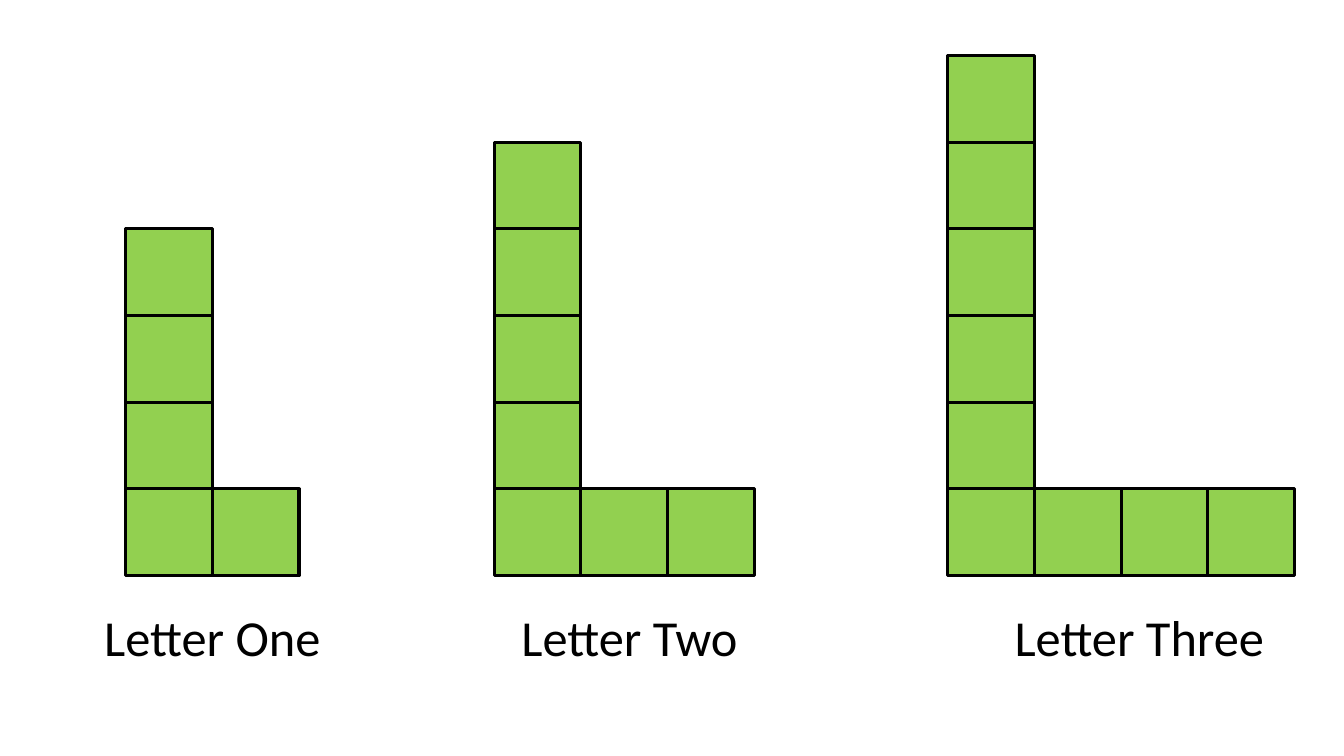
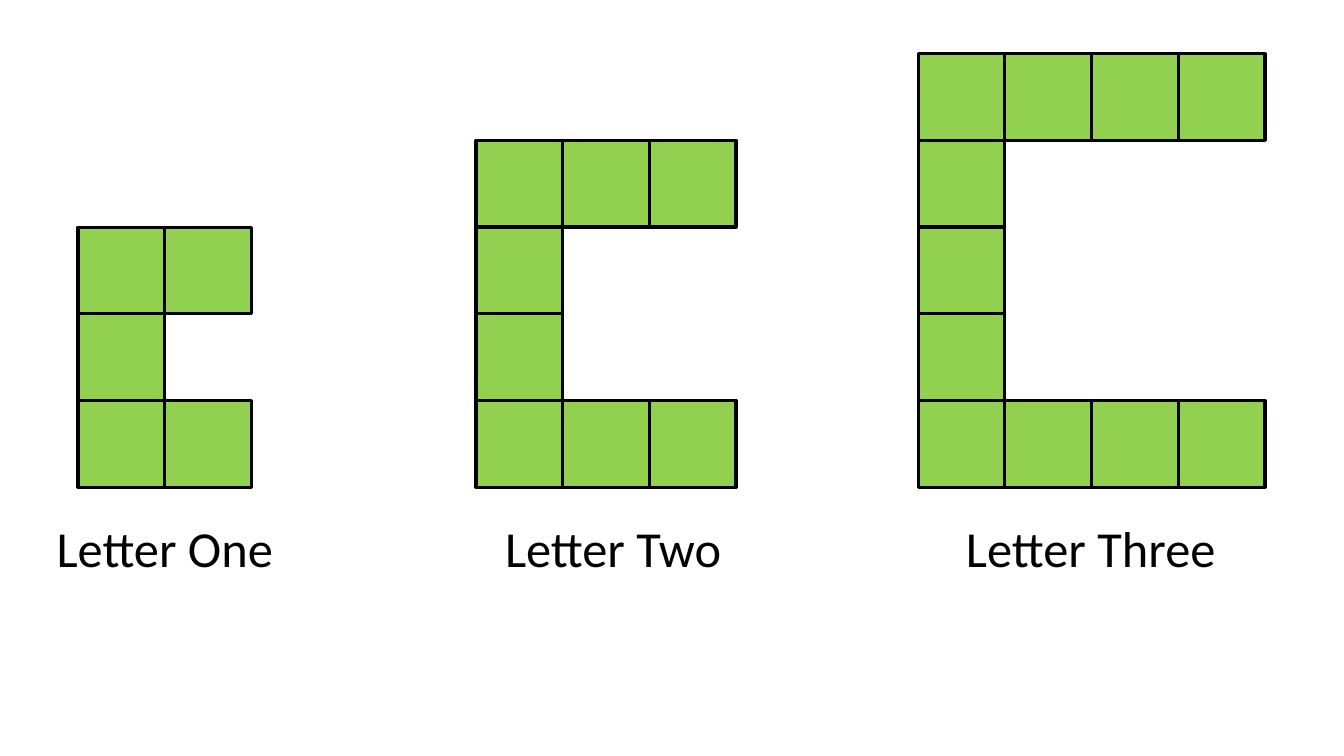
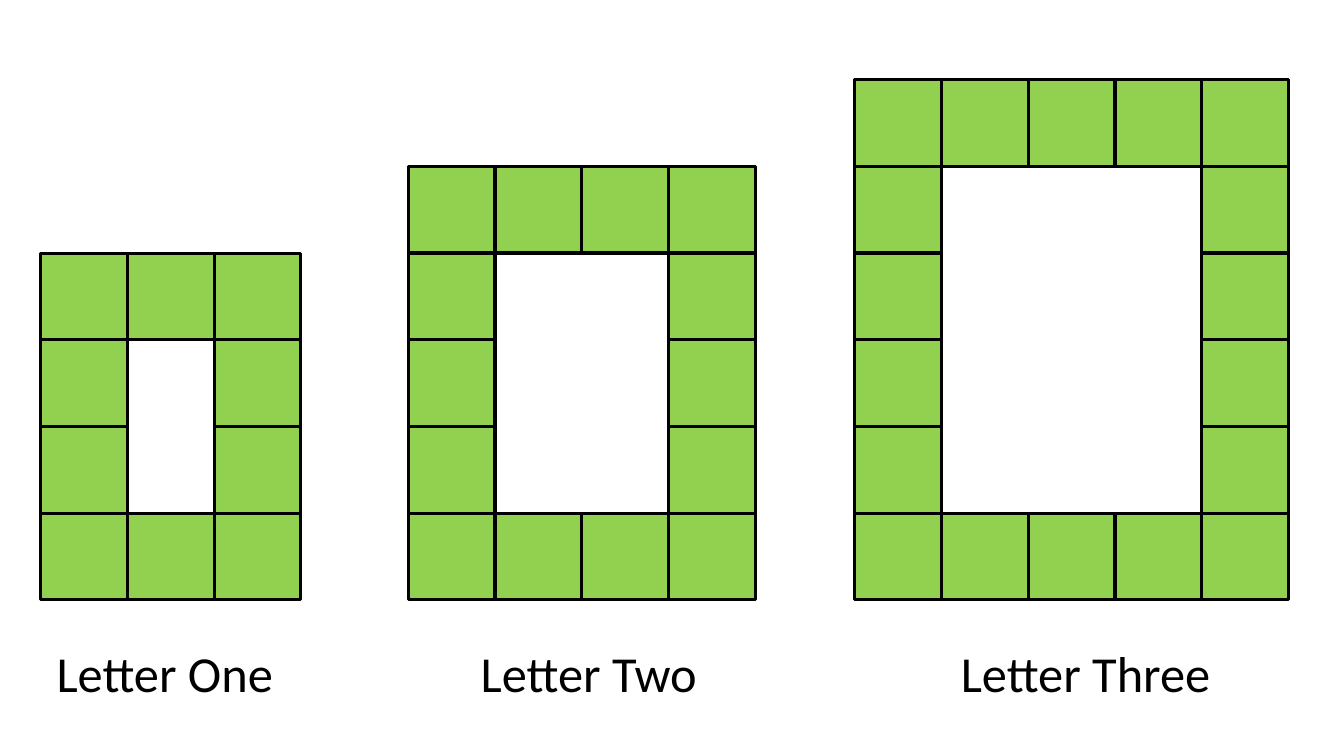
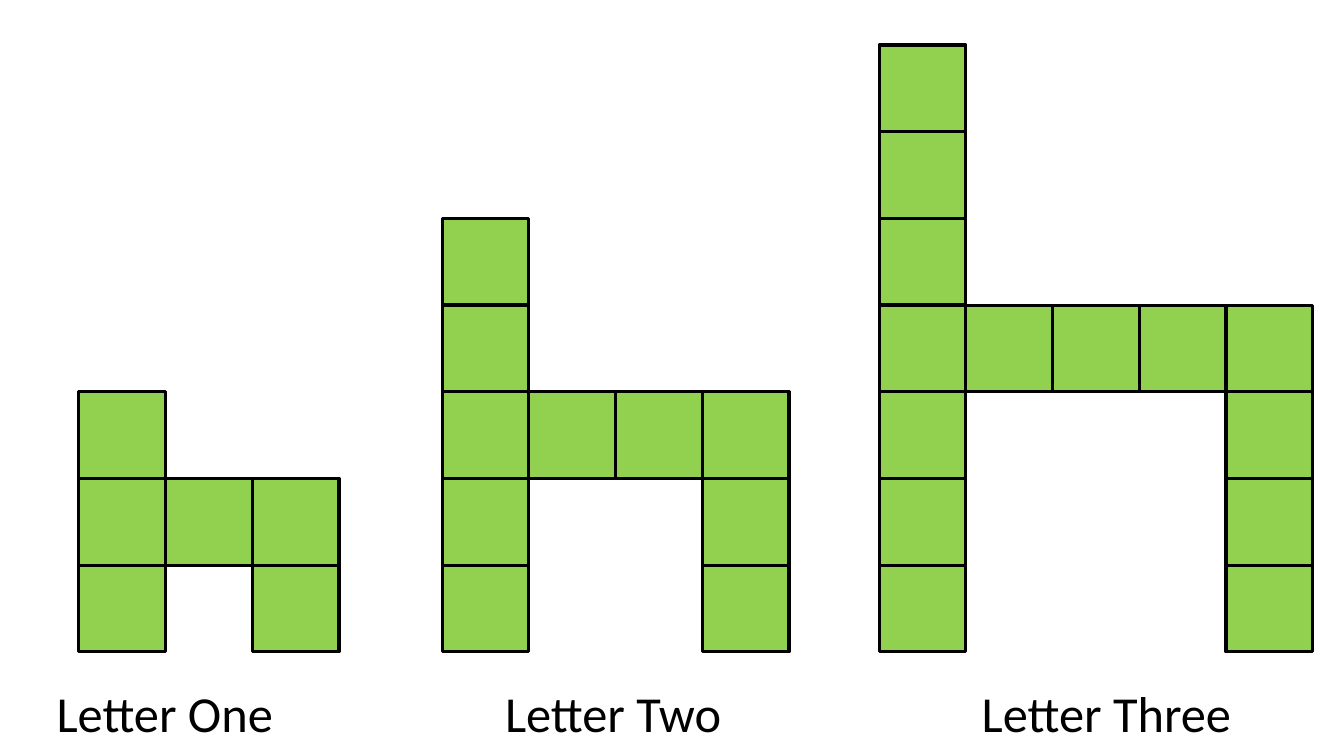
from pptx import Presentation
from pptx.dml.color import RGBColor
from pptx.enum.shapes import MSO_SHAPE as SHAPE
from pptx.enum.text import MSO_AUTO_SIZE as AUTO, PP_ALIGN as ALIGN
from pptx.util import Inches, Pt


def color(value):
    return RGBColor.from_string(value)


def grid(cells):
    return Inches(0.86 * cells)


def letter_l(n):
    return [(0, row) for row in range(n + 3)] + [(col, 0) for col in range(1, n + 1)]


def letter_c(n):
    top = n + 1
    stem = [(0, row) for row in range(top + 1)]
    return stem + [(col, row) for row in (0, top) for col in range(1, n + 1)]


def letter_o(n):
    right, top = n + 1, n + 2
    return [(col, row) for row in range(top + 1) for col in range(right + 1)
            if col in (0, right) or row in (0, top)]


def letter_h(n):
    right = n + 1
    stem = [(0, row) for row in range(2 * n + 1)]
    bar = [(col, n) for col in range(1, right + 1)]
    return stem + bar + [(right, row) for row in range(n)]


class Deck:
    FONT, SIZE = "Calibri", 36
    INK, TILE = "000000", "92D050"
    LINE = 2.25
    LABEL_HEIGHT = 0.83

    def __init__(self):
        self.prs = Presentation()
        self.prs.slide_width, self.prs.slide_height = Inches(13.33), Inches(7.5)

    def slide(self):
        self.s = self.prs.slides.add_slide(self.prs.slide_layouts[6])

    def label(self, text, center, top, width):
        sp = self.s.shapes.add_textbox(grid(center - width / 2), grid(top),
                                       grid(width), grid(self.LABEL_HEIGHT))
        tf = sp.text_frame
        tf.word_wrap = True
        tf.auto_size = AUTO.SHAPE_TO_FIT_TEXT
        tf.text = text
        p = tf.paragraphs[0]
        p.alignment = ALIGN.CENTER
        font = p.runs[0].font
        font.name, font.size = self.FONT, Pt(self.SIZE)
        font.color.rgb = color(self.INK)

    def letter(self, tiles, left, base):
        shapes = self.s.shapes.add_group_shape().shapes
        for col, row in tiles:
            sp = shapes.add_shape(SHAPE.RECTANGLE, grid(left + col),
                                  grid(base - row), grid(1), grid(1))
            sp.shadow.inherit = False
            sp.fill.solid()
            sp.fill.fore_color.rgb = color(self.TILE)
            sp.line.color.rgb = color(self.INK)
            sp.line.width = Pt(self.LINE)


LABELS = [("Letter One", 2.86), ("Letter Two", 2.86), ("Letter Three", 3.23)]

PATTERNS = [
    (letter_l, 5.64, (1.45, 5.7, 10.93), 6.93, (2.45, 7.26, 13.14)),
    (letter_c, 4.62, (0.9, 5.49, 10.59), 5.91, (1.9, 7.07, 12.58)),
    (letter_o, 5.92, (0.47, 4.71, 9.86), 7.35, (1.9, 6.79, 12.52)),
    (letter_h, 6.52, (0.91, 5.1, 10.14), 7.81, (1.9, 7.07, 12.76)),
]


def main():
    deck = Deck()
    for tiles, base, lefts, label_top, centers in PATTERNS:
        deck.slide()
        for (text, width), center in zip(LABELS, centers):
            deck.label(text, center, label_top, width)
        for n, left in enumerate(lefts, 1):
            deck.letter(tiles(n), left, base)
    deck.prs.save("out.pptx")


if __name__ == "__main__":
    main()
